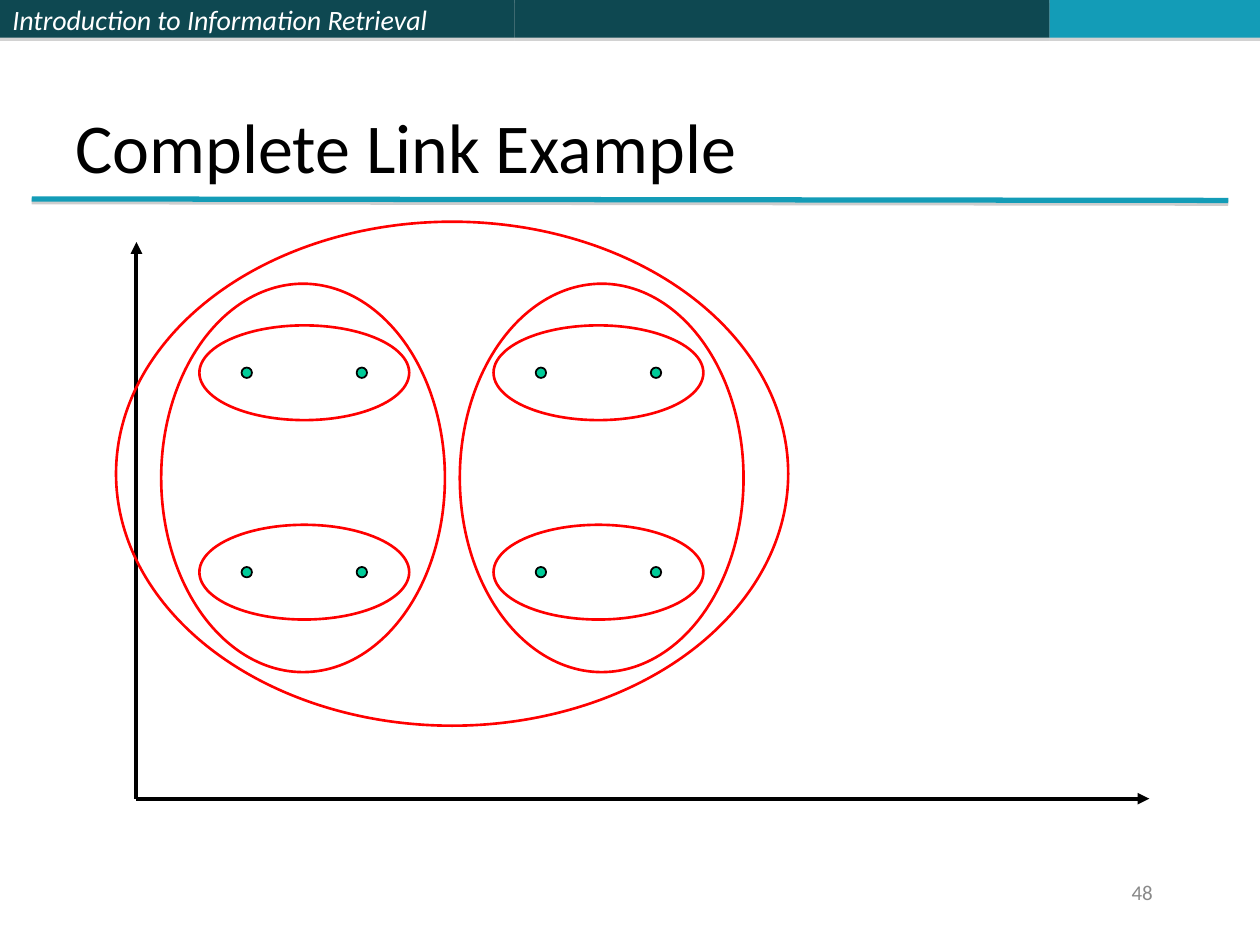
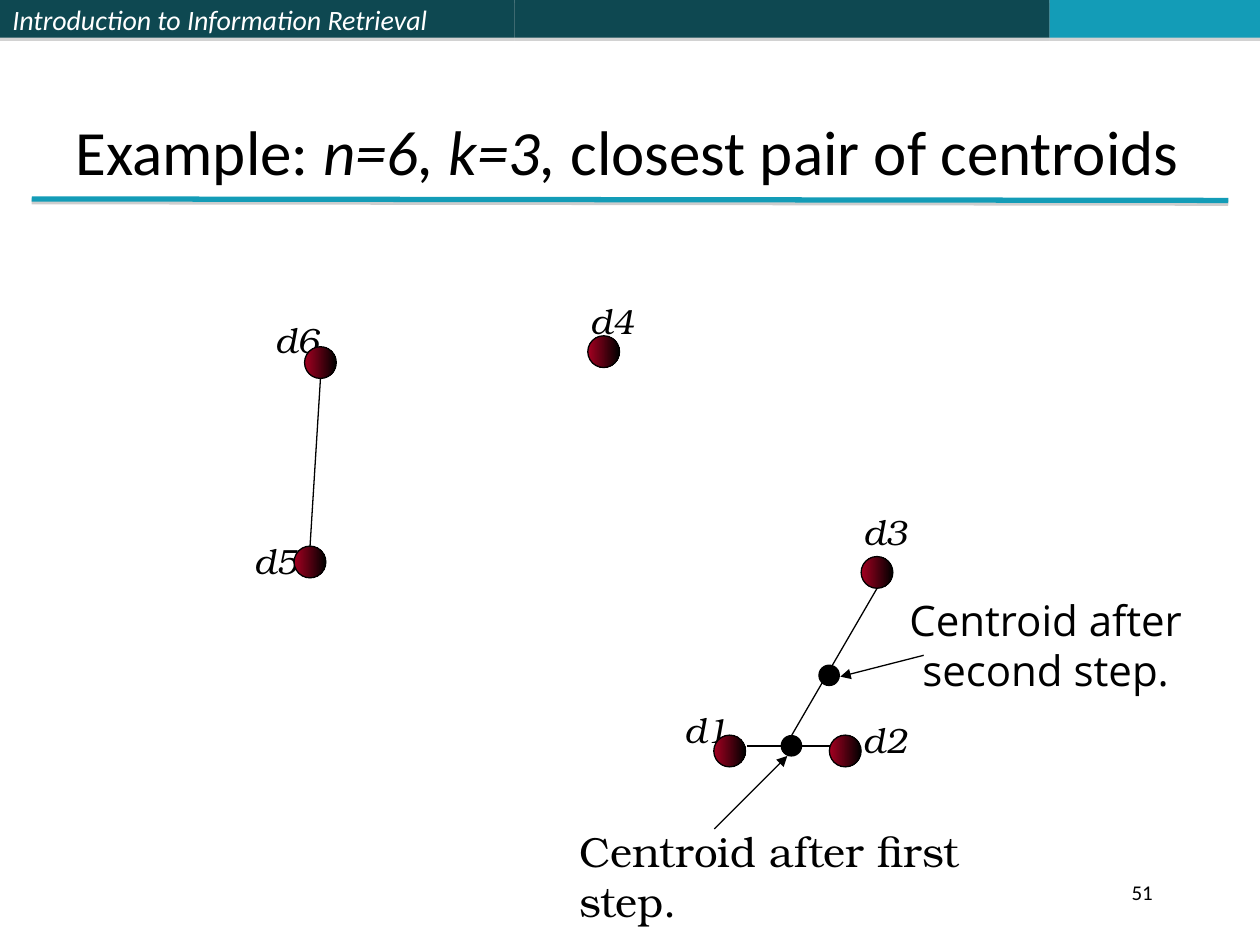
from collections import namedtuple
from itertools import product

from lxml import etree
from pptx import Presentation
from pptx.dml.color import RGBColor
from pptx.enum import shapes, text
from pptx.oxml.ns import qn
from pptx.util import Cm, Pt

COLORS = {
    "band": "0E4851",
    "accent": "139CB7",
    "shadow": "808080",
    "white": "FFFFFF",
    "ink": "000000",
    "muted": "898989",
    "point": "00CC99",
    "cluster": "FF0000",
    "document": "A50021",
}
SANS, NOTE_SANS, SERIF = "Calibri", "Open Sans", "TeX Gyre Bonum"
TITLE_ONLY = 5
LEFT, CENTER, RIGHT = text.PP_ALIGN.LEFT, text.PP_ALIGN.CENTER, text.PP_ALIGN.RIGHT
TOP, MIDDLE = text.MSO_ANCHOR.TOP, text.MSO_ANCHOR.MIDDLE

Box = namedtuple("Box", "left top width height")
HEADER = Box(0, 0, 25.4, 0.76)
TITLE = Box(1.27, 0.28, 22.83, 3.63)
RULE = Box(0.64, 4.01, 24.12, 0.03)
PAGE_NUMBER = Box(18.21, 17.35, 5.28, 1.27)
PLOT = Box(2.34, 4.47, 20.83, 11.63)
CENTROID_MAP = Box(4.88, 5.92, 19.35, 12.7)

DOT, DOCUMENT, CENTROID = 0.21, 0.64, 0.41
DOCUMENTS = {
    "d1": ((9.51, 8.9), (-0.85, -0.67)),
    "d2": ((11.84, 8.9), (0.42, -0.47)),
    "d3": ((12.48, 5.3), (-0.21, -1.06)),
    "d4": ((6.97, 0.85), (-0.21, -0.85)),
    "d5": ((1.05, 5.09), (-1.06, -0.26)),
    "d6": ((1.26, 1.07), (-0.85, -0.69)),
}


def rgb(name):
    return RGBColor.from_string(COLORS[name])


def inside(box, x, y, width, height):
    return Box(box.left + x, box.top + y, width, height)


def lengths(box):
    return [Cm(side) for side in box]


def cast_shadow(effects, opacity, distance):
    shadow = etree.SubElement(effects, qn("a:outerShdw"), blurRad="0",
                              dist=str(Pt(distance)), dir="5400000",
                              algn="ctr", rotWithShape="0")
    tint = etree.SubElement(shadow, qn("a:srgbClr"), val=COLORS["shadow"])
    etree.SubElement(tint, qn("a:alpha"), val=str(opacity * 1000))


def add_line(parent, start, end, width, color="ink", arrow=False):
    line = parent.add_connector(shapes.MSO_CONNECTOR.STRAIGHT,
                                *map(Cm, (*start, *end)))
    line.line.color.rgb = rgb(color)
    line.line.width = Pt(width)
    if arrow:
        etree.SubElement(line.line._get_or_add_ln(), qn("a:tailEnd"),
                         type="triangle")
    return etree.SubElement(line._element.spPr, qn("a:effectLst"))


def add_solid(parent, preset, box, fill=None, outline=None, width=0.75):
    solid = parent.add_shape(preset, *lengths(box))
    if fill:
        solid.fill.solid()
        solid.fill.fore_color.rgb = rgb(fill)
    else:
        solid.fill.background()
    if outline:
        solid.line.color.rgb = rgb(outline)
        solid.line.width = Pt(width)
    else:
        solid.line.fill.background()
    solid.shadow.inherit = False
    return solid


def add_ellipse(parent, box, fill=None, outline="ink", width=0.75):
    return add_solid(parent, shapes.MSO_SHAPE.OVAL, box, fill, outline, width)


def style(paragraph, font, size, color="ink", align=LEFT, italic=False):
    paragraph.alignment = align
    paragraph.font.name = font
    paragraph.font.size = Pt(size)
    paragraph.font.italic = italic
    paragraph.font.color.rgb = rgb(color)


def add_text(parent, box, wording, font, size, anchor=TOP, **look):
    frame = parent.add_textbox(*lengths(box)).text_frame
    frame.word_wrap = True
    frame.vertical_anchor = anchor
    frame.text = wording
    for paragraph in frame.paragraphs:
        style(paragraph, font, size, **look)


def add_header(slide, box):
    left = box.left
    for width, fill, wording in ((10.37, "band", "Introduction to Information Retrieval"),
                                 (10.79, "band", ""),
                                 (4.24, "accent", "")):
        band = add_solid(slide.shapes, shapes.MSO_SHAPE.RECTANGLE,
                         Box(left, box.top, width, box.height), fill)
        cast_shadow(band._element.spPr.find(qn("a:effectLst")), 35, 1.8)
        if wording:
            band.text_frame.text = wording
            band.text_frame.vertical_anchor = MIDDLE
            style(band.text_frame.paragraphs[0], SANS, 16, "white", italic=True)
        left += width


def add_title(slide, box, runs, size):
    title = slide.shapes.title
    title.left, title.top, title.width, title.height = lengths(box)
    frame = title.text_frame
    frame.auto_size = text.MSO_AUTO_SIZE.NONE
    frame.vertical_anchor = text.MSO_ANCHOR.BOTTOM
    heading = frame.paragraphs[0]
    style(heading, SANS, size)
    for wording, italic in runs:
        run = heading.add_run()
        run.text = wording
        run.font.italic = italic


def add_frame(deck, title_runs, title_size, number, number_color):
    slide = deck.slides.add_slide(deck.slide_layouts[TITLE_ONLY])
    add_header(slide, HEADER)
    rule_effects = add_line(slide.shapes, (RULE.left, RULE.top),
                            (RULE.left + RULE.width, RULE.top + RULE.height),
                            3, "accent")
    cast_shadow(rule_effects, 38, 1.6)
    add_title(slide, TITLE, title_runs, title_size)
    add_text(slide.shapes, PAGE_NUMBER, number, SANS, 12, MIDDLE,
             color=number_color, align=RIGHT)
    return slide


def add_axes(slide, box):
    axes = slide.shapes.add_group_shape().shapes
    origin = box.left + 0.41, box.top + box.height
    for tip in ((origin[0], box.top + 0.41), (box.left + box.width, origin[1])):
        add_line(axes, origin, tip, 2.25, arrow=True)


def add_clusters(slide, box):
    pairs = [inside(box, x, y, 4.23, 1.91)
             for x, y in product((1.68, 7.61), (2.09, 6.11))]
    for pair, x in product(pairs, (0.85, 3.17)):
        add_ellipse(slide.shapes, inside(pair, x, 0.85, DOT, DOT), "point", width=1)
    halves = [inside(box, x, 1.25, 5.72, 7.83) for x in (0.91, 6.93)]
    whole = inside(box, 0, 0, 13.55, 10.16)
    for cluster in (*pairs, *halves, whole):
        add_ellipse(slide.shapes, cluster, outline="cluster", width=1.5)


def add_document(slide, box):
    document = add_ellipse(slide.shapes, box)
    document.fill.gradient()
    document.fill.gradient_angle = 0
    for stop, color in zip(document.fill.gradient_stops, ("document", "ink")):
        stop.color.rgb = rgb(color)


def add_centroid_map(slide, box):
    def at(x, y):
        return box.left + x, box.top + y

    def top_of(name):
        x, y = DOCUMENTS[name][0]
        return at(x + DOCUMENT / 2, y)

    def bottom_of(name):
        x, y = top_of(name)
        return x, y + DOCUMENT

    for (x, y), (dx, dy) in DOCUMENTS.values():
        label = next(n for n, spot in DOCUMENTS.items() if spot[0] == (x, y))
        add_text(slide.shapes, inside(box, x + dx, y + dy, 1.47, 1.09),
                 label, SERIF, 20, italic=True)

    first_step = slide.shapes.add_group_shape().shapes
    first = inside(box, 10.87, 8.91, CENTROID, CENTROID)
    add_line(first_step, at(9.52, 10.79), at(10.99, 9.32), 0.75, arrow=True)
    add_text(first_step, inside(box, 6.55, 10.59, 9.8, 1.27),
             "Centroid after first step.", SERIF, 24)
    add_line(first_step, at(10.18, 9.12), at(11.96, 9.12), 1)
    add_ellipse(first_step, first, "ink")

    for (x, y), _ in DOCUMENTS.values():
        add_document(slide, inside(box, x, y, DOCUMENT, DOCUMENT))
    add_line(slide.shapes, (first.left + CENTROID / 2, first.top),
             bottom_of("d3"), 0.75)

    second_step = slide.shapes.add_group_shape().shapes
    add_ellipse(second_step, inside(box, 11.63, 7.49, CENTROID, CENTROID), "ink")
    add_line(second_step, at(13.74, 7.29), at(12.06, 7.72), 0.75, arrow=True)
    add_text(second_step, inside(box, 13.05, 5.92, 6.3, 2.31),
             "Centroid after\nsecond step.", NOTE_SANS, 24, MIDDLE, align=CENTER)
    add_line(slide.shapes, bottom_of("d6"), top_of("d5"), 0.75)


def main():
    deck = Presentation()
    deck.slide_width, deck.slide_height = Cm(25.4), Cm(19.05)

    complete_link = add_frame(deck, [("Complete Link Example", False)], 40,
                              "48", "muted")
    add_axes(complete_link, PLOT)
    add_clusters(complete_link, PLOT)

    centroids = add_frame(deck, [("Example: ", False), ("n=6, k=3, ", True),
                                 ("closest pair of centroids", False)], 36,
                          "51", "ink")
    add_centroid_map(centroids, CENTROID_MAP)

    deck.save("out.pptx")


if __name__ == "__main__":
    main()
